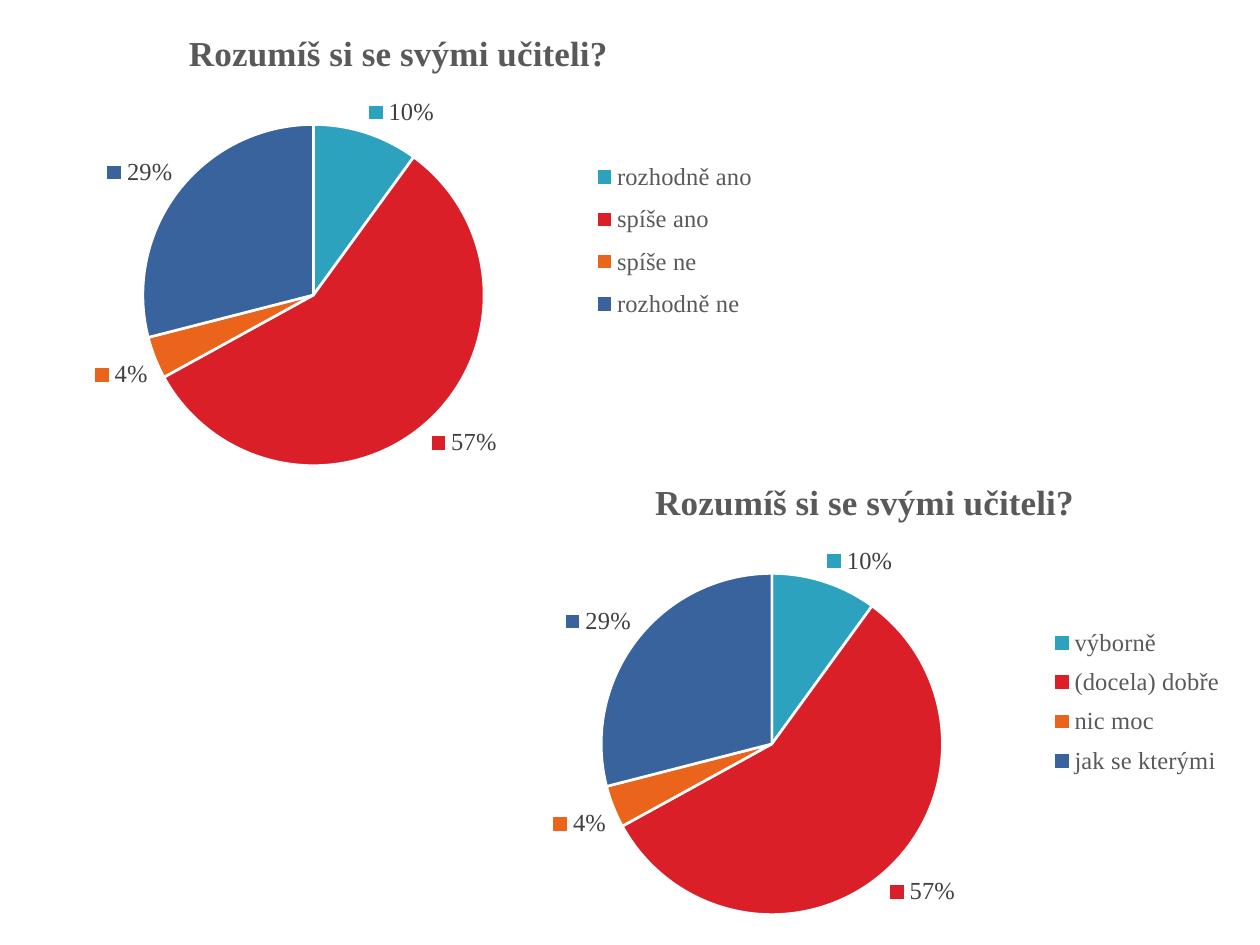
from lxml import etree
from pptx import Presentation
from pptx.chart.data import CategoryChartData
from pptx.dml.color import RGBColor
from pptx.enum.chart import XL_CHART_TYPE, XL_LABEL_POSITION, XL_LEGEND_POSITION
from pptx.oxml.ns import qn
from pptx.util import Cm, Pt

PIE = XL_CHART_TYPE.PIE
OUTSIDE = XL_LABEL_POSITION.OUTSIDE_END
RIGHT = XL_LEGEND_POSITION.RIGHT

BLACK = RGBColor(0x00, 0x00, 0x00)
WHITE = RGBColor(0xFF, 0xFF, 0xFF)
GREY = RGBColor(0x59, 0x59, 0x59)
DARK_GREY = RGBColor(0x40, 0x40, 0x40)
TEAL = RGBColor(0x2D, 0xA2, 0xBF)
RED = RGBColor(0xDA, 0x1F, 0x28)
ORANGE = RGBColor(0xEB, 0x64, 0x1B)
BLUE = RGBColor(0x39, 0x63, 0x9D)
SLICE_COLORS = [TEAL, RED, ORANGE, BLUE]

SERIF = "Times New Roman"
TITLE = "Rozumíš si se svými učiteli?"
SHARES = [10, 57, 4, 29]

SLIDE_W, SLIDE_H = Cm(25.4), Cm(19.05)
CHART_W, CHART_H = Cm(16), Cm(10)

# Positions inside a chart are fractions of its width and height.
TITLE_AT = dict(x=0.23, y=0.05)
CHARTS = [
    dict(left=0, top=0,
         answers=["rozhodně ano", "spíše ano", "spíše ne", "rozhodně ne"],
         pie=dict(x=0.18, y=0.25, w=0.43, h=0.69),
         legend=dict(x=0.73, y=0.3, w=0.24, h=0.37)),
    dict(left=SLIDE_W - CHART_W, top=SLIDE_H - CHART_H,
         answers=["výborně", "(docela) dobře", "nic moc", "jak se kterými"],
         pie=dict(x=0.17, y=0.25, w=0.43, h=0.69),
         legend=dict(x=0.72, y=0.34, w=0.25, h=0.34)),
]


def set_font(font, size, color, name=SERIF, bold=False):
    font.name, font.size, font.bold = name, Pt(size), bold
    font.color.rgb = color


def add_title(chart, text, **fmt):
    p = chart.chart_title.text_frame.paragraphs[0]
    r = p.add_run()
    r.text = text
    set_font(r.font, **fmt)


def place(part, index, box, inner=False):
    """Give a chart part a manual layout, as its child number index."""
    for old in part.findall(qn("c:layout")):
        part.remove(old)
    layout = etree.Element(qn("c:layout"))
    manual = etree.SubElement(layout, qn("c:manualLayout"))
    settings = {"layoutTarget": "inner"} if inner else {}
    settings.update(xMode="edge", yMode="edge", **box)
    for tag, value in settings.items():
        etree.SubElement(manual, qn("c:" + tag)).set("val", str(value))
    part.insert(index, layout)


def add_pie(s, left, top, answers, pie, legend):
    data = CategoryChartData()
    data.categories = answers
    data.add_series("Series 1", SHARES)
    chart = s.shapes.add_chart(PIE, left, top, CHART_W, CHART_H, data).chart
    set_font(chart.font, 10, BLACK, "Cambria")
    add_title(chart, TITLE, size=20, color=GREY, bold=True)

    chart.has_legend = True
    chart.legend.position = RIGHT
    chart.legend.include_in_layout = False
    set_font(chart.legend.font, 14, GREY)

    plot = chart.plots[0]
    plot.vary_by_categories = True
    for i, color in enumerate(SLICE_COLORS):
        fmt = plot.series[0].points[i].format
        fmt.fill.solid()
        fmt.fill.fore_color.rgb = color
        fmt.line.color.rgb = WHITE
        fmt.line.width = Pt(1.5)

    plot.has_data_labels = True
    labels = plot.data_labels
    labels.show_percentage = True
    labels.show_value = False
    labels.show_legend_key = True
    labels.number_format = "0%"
    labels.number_format_is_linked = False
    labels.position = OUTSIDE
    set_font(labels.font, 14, DARK_GREY)

    root = chart.element.find(qn("c:chart"))
    place(root.find(qn("c:title")), 1, TITLE_AT)
    place(root.find(qn("c:plotArea")), 0, pie, inner=True)
    place(root.find(qn("c:legend")), 1, legend)


prs = Presentation()
prs.slide_width, prs.slide_height = SLIDE_W, SLIDE_H
s = prs.slides.add_slide(prs.slide_layouts[6])
for spec in CHARTS:
    add_pie(s, **spec)
prs.save("out.pptx")
